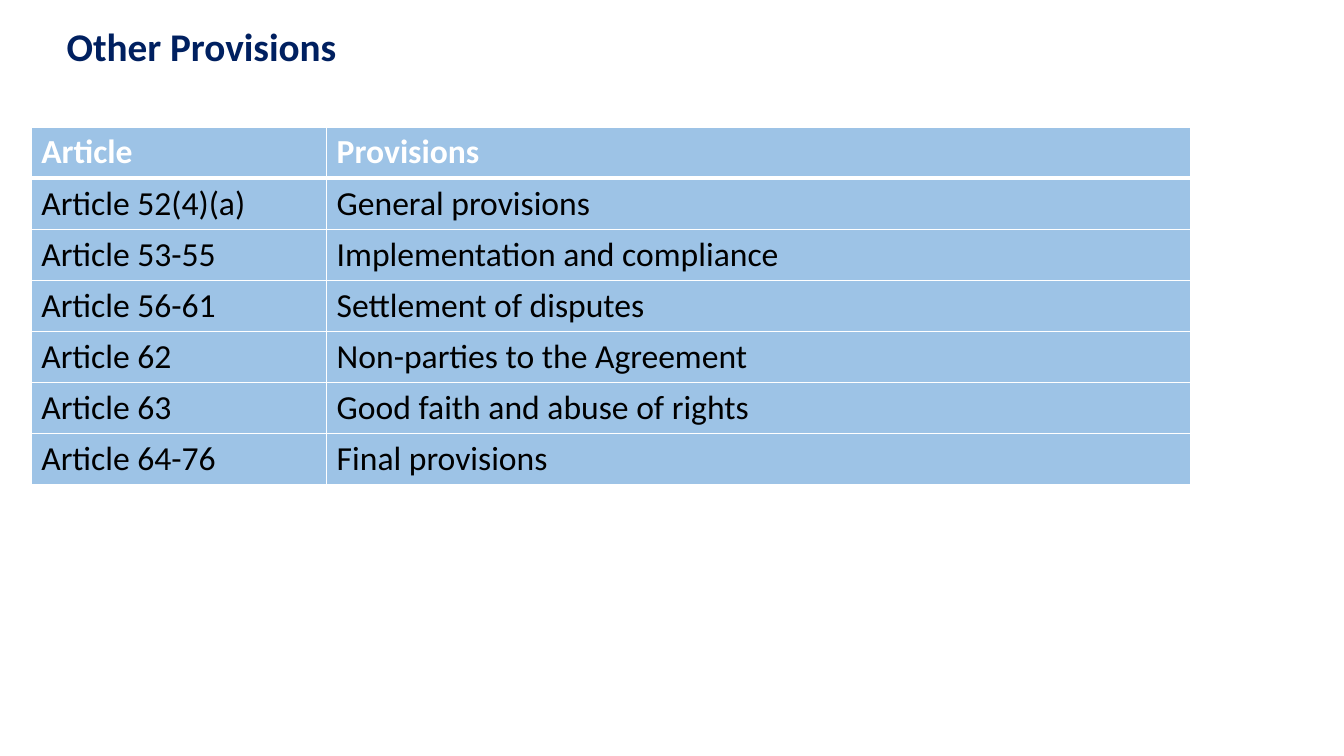
"""Build the "Other Provisions" slide with its table of articles."""
from dataclasses import dataclass

from lxml.etree import SubElement
from pptx import Presentation
from pptx.dml.color import RGBColor as RGB
from pptx.enum.text import MSO_ANCHOR as Anchor, MSO_AUTO_SIZE as AutoSize, PP_ALIGN as Align
from pptx.oxml.ns import qn
from pptx.slide import Slide
from pptx.table import _Cell as Cell
from pptx.text.text import _Paragraph as Paragraph
from pptx.util import Inches, Pt


@dataclass(frozen=True)
class Theme:
    font: str = "Calibri"
    title: RGB = RGB(0x00, 0x20, 0x60)
    fill: RGB = RGB(0x9D, 0xC3, 0xE6)
    header: RGB = RGB(0xFF, 0xFF, 0xFF)
    body: RGB = RGB(0x00, 0x00, 0x00)
    border: RGB = RGB(0xFF, 0xFF, 0xFF)
    title_size: int = 28
    table_size: int = 24
    thin: int = 1
    thick: int = 3


@dataclass(frozen=True)
class Provision:
    article: str
    subject: str


THEME = Theme()
HEADER = Provision("Article", "Provisions")
PROVISIONS = [
    Provision("Article 52(4)(a)", "General provisions"),
    Provision("Article 53-55", "Implementation and compliance"),
    Provision("Article 56-61", "Settlement of disputes"),
    Provision("Article 62", "Non-parties to the Agreement"),
    Provision("Article 63", "Good faith and abuse of rights"),
    Provision("Article 64-76", "Final provisions"),
]
COLUMN_WIDTHS = (2.93, 8.57)
ROW_HEIGHT = 0.5


def style_text(p: Paragraph, size: int, color: RGB, bold: bool) -> None:
    p.font.name = THEME.font
    p.font.size = Pt(size)
    p.font.bold = bold
    p.font.color.rgb = color


def set_borders(cell: Cell, top: int, bottom: int) -> None:
    tc_pr = cell._tc.get_or_add_tcPr()
    widths = {"a:lnL": THEME.thin, "a:lnR": THEME.thin, "a:lnT": top, "a:lnB": bottom}
    for side, width in widths.items():
        line = SubElement(tc_pr, qn(side), w=str(Pt(width)))
        fill = SubElement(line, qn("a:solidFill"))
        SubElement(fill, qn("a:srgbClr"), val=str(THEME.border))


def add_title(slide: Slide, text: str) -> None:
    sp = slide.shapes.title
    sp.left, sp.top = Inches(0.56), Inches(0.17)
    sp.width, sp.height = Inches(8.95), Inches(0.57)
    tf = sp.text_frame
    tf.text = text
    tf.word_wrap = True
    tf.auto_size = AutoSize.NONE
    tf.vertical_anchor = Anchor.MIDDLE
    p = tf.paragraphs[0]
    p.alignment = Align.LEFT
    style_text(p, THEME.title_size, THEME.title, True)


def add_provisions(slide: Slide, rows: list[Provision]) -> None:
    table = slide.shapes.add_table(
        len(rows), len(COLUMN_WIDTHS), Inches(0.31), Inches(1.26),
        Inches(sum(COLUMN_WIDTHS)), Inches(ROW_HEIGHT * len(rows))).table
    table.horz_banding = False
    for column, width in zip(table.columns, COLUMN_WIDTHS):
        column.width = Inches(width)
    for i, row in enumerate(rows):
        is_header = i == 0
        top = THEME.thick if i == 1 else THEME.thin
        bottom = THEME.thick if is_header else THEME.thin
        color = THEME.header if is_header else THEME.body
        for j, text in enumerate((row.article, row.subject)):
            cell = table.cell(i, j)
            cell.text = text
            set_borders(cell, top, bottom)
            cell.fill.solid()
            cell.fill.fore_color.rgb = THEME.fill
            style_text(cell.text_frame.paragraphs[0], THEME.table_size, color, is_header)


def main() -> None:
    prs = Presentation()
    prs.slide_width, prs.slide_height = Inches(13.33), Inches(7.5)
    slide = prs.slides.add_slide(prs.slide_layouts.get_by_name("Title Only"))
    add_title(slide, "Other Provisions")
    add_provisions(slide, [HEADER, *PROVISIONS])
    prs.save("out.pptx")


if __name__ == "__main__":
    main()
